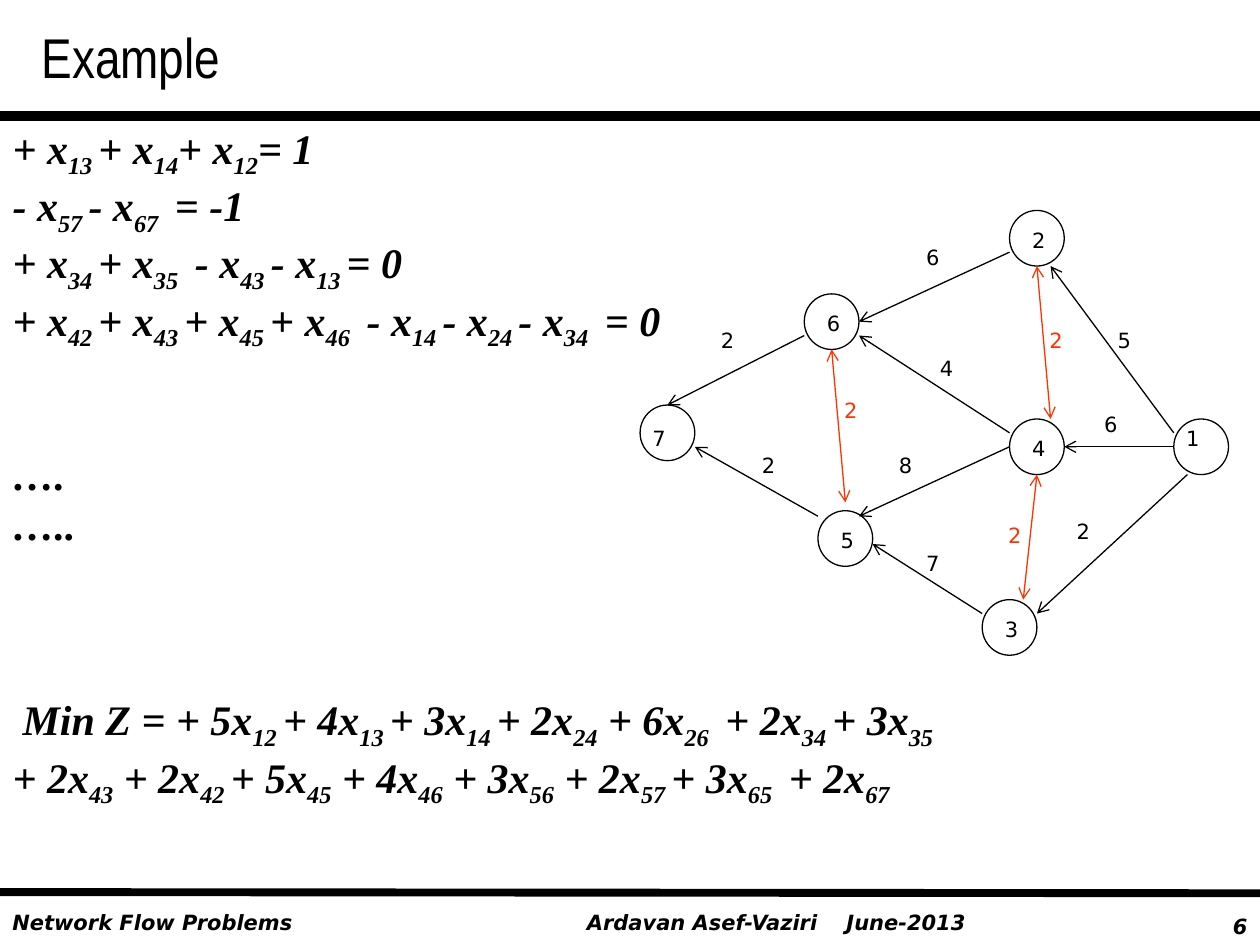
from dataclasses import dataclass

from lxml import etree
from pptx import Presentation
from pptx.dml.color import RGBColor
from pptx.enum.shapes import MSO_CONNECTOR, MSO_SHAPE
from pptx.enum.text import MSO_ANCHOR, MSO_AUTO_SIZE, PP_ALIGN
from pptx.oxml.ns import qn
from pptx.util import Inches, Pt

STRAIGHT = MSO_CONNECTOR.STRAIGHT
OVAL = MSO_SHAPE.OVAL
TOP = MSO_ANCHOR.TOP
NO_AUTOFIT = MSO_AUTO_SIZE.NONE
LEFT, RIGHT = PP_ALIGN.LEFT, PP_ALIGN.RIGHT
TITLE_AND_CONTENT = 1


@dataclass(frozen=True)
class Theme:
    black: RGBColor = RGBColor(0x00, 0x00, 0x00)
    red: RGBColor = RGBColor(0xFF, 0x33, 0x00)
    title_font: str = "Arial Narrow"
    formula_font: str = "Times New Roman"
    label_font: str = "DejaVu Sans"
    title_size: int = 32
    formula_size: int = 24
    label_size: int = 12
    thin: float = 0.75


THEME = Theme()
SLIDE_WIDTH, SLIDE_HEIGHT = Inches(10), Inches(7.5)

# Formulas: braces hold subscripts; the number is the count of empty lines above
FORMULAS = [
    ("+ x{13 }+ x{14}+ x{12}= 1", 0),
    ("- x{57 }- x{67 } = -1", 0),
    ("+ x{34 }+ x{35 } - x{43 }- x{13 }= 0", 0),
    ("+ x{42 }+ x{43 }+ x{45 }+ x{46 } - x{14 }- x{24 }- x{34 } = 0", 0),
    ("….", 2),
    ("…..", 0),
    ("Min Z = + 5x{12 }+ 4x{13 }+ 3x{14 }+ 2x{24} + 6x{26 } + 2x{34 }+ 3x{35}", 3),
    ("+ 2x{43} + 2x{42 }+ 5x{45} + 4x{46} + 3x{56} + 2x{57 }+ 3x{65 } + 2x{67}", 0),
]
EMPTY_LINE = 27.6
OBJECTIVE_INDENT = 0.08

# Network, in columns and rows of its own grid
COLUMNS, ROWS, NODE_CELLS = 43, 32, 4
# number: (column, row), offset of the number within the node
NODES = {
    "1": ((39, 15), (0, 0)),
    "2": ((27, 0), (0.75, 0.75)),
    "3": ((25, 28), (0.75, 0.75)),
    "4": ((27, 15), (0.75, 0.75)),
    "5": ((13, 21.6), (0.75, 0.75)),
    "6": ((12, 6), (0.75, 0.75)),
    "7": ((0, 14), (0, 1)),
}
# start, end, capacity, place of the capacity
ONE_WAY_ARCS = [
    ((40, 19), (29, 29), "2", (31, 21.75)),
    ((39, 17), (31, 17), "6", (33, 14)),
    ((39, 16), (30, 4), "5", (34, 8)),
    ((27, 3), (16, 8), "6", (20, 2)),
    ((27, 17), (16, 22), "8", (18, 17)),
    ((25, 29), (17, 24), "7", (20, 24)),
    ((27, 16), (16, 9), "4", (21, 10)),
    ((12, 9), (2, 14), "2", (5, 8)),
    ((13, 22), (4, 17), "2", (8, 17)),
]
TWO_WAY_ARCS = [
    ((14, 10), (15, 21), "2", (14, 13)),
    ((29, 19), (28, 28), "2", (26, 22)),
    ((29, 4), (30, 15), "2", (29, 8)),
]


def share(left, top, width, height):
    """Turn percentages of the slide into a box."""
    return (int(SLIDE_WIDTH * left / 100), int(SLIDE_HEIGHT * top / 100),
            int(SLIDE_WIDTH * width / 100), int(SLIDE_HEIGHT * height / 100))


def place(shape, box):
    shape.left, shape.top, shape.width, shape.height = box


def prepare_frame(shape):
    frame = shape.text_frame
    frame.word_wrap = True
    frame.auto_size = NO_AUTOFIT
    frame.vertical_anchor = TOP
    return frame


def style(paragraph, font_name, size, color=THEME.black, strong=False):
    font = paragraph.font
    font.name, font.size = font_name, Pt(size)
    font.bold = font.italic = strong
    font.color.rgb = color


def add_label(slide, box, text, color=THEME.black, strong=False, alignment=LEFT, tab=None):
    paragraph = prepare_frame(slide.shapes.add_textbox(*box)).paragraphs[0]
    paragraph.text = text
    paragraph.alignment = alignment
    if tab:
        stops = etree.SubElement(paragraph._p.get_or_add_pPr(), qn("a:tabLst"))
        etree.SubElement(stops, qn("a:tab"), pos=str(Inches(tab)), algn="l")
    style(paragraph, THEME.label_font, THEME.label_size, color, strong)


def add_line(slide, start, end, width, color=THEME.black, arrowheads=()):
    connector = slide.shapes.add_connector(STRAIGHT, *start, *end)
    connector.line.color.rgb = color
    connector.line.width = Pt(width)
    outline = connector.line._get_or_add_ln()
    for arrowhead in arrowheads:
        etree.SubElement(outline, qn(arrowhead), type="arrow")
    etree.SubElement(connector._element.spPr, qn("a:effectLst"))


def add_title(slide, box):
    title = slide.shapes.title
    place(title, box)
    paragraph = prepare_frame(title).paragraphs[0]
    paragraph.text = "Example"
    paragraph.alignment = LEFT
    style(paragraph, THEME.title_font, THEME.title_size)


def add_formulas(slide, box):
    body = slide.placeholders[1]
    place(body, box)
    frame = prepare_frame(body)
    for index, (formula, empty_lines) in enumerate(FORMULAS):
        paragraph = frame.add_paragraph() if index else frame.paragraphs[0]
        paragraph.space_before = Pt(empty_lines * EMPTY_LINE)
        indent = OBJECTIVE_INDENT if formula.startswith("Min") else 0
        properties = paragraph._p.get_or_add_pPr()
        properties.set("marL", "0")
        properties.set("indent", str(Inches(indent)))
        etree.SubElement(properties, qn("a:buNone"))
        style(paragraph, THEME.formula_font, THEME.formula_size, strong=True)
        for part, text in enumerate(formula.replace("}", "{").split("{")):
            if text:
                run = paragraph.add_run()
                run.text = text
                if part % 2:
                    run.font._element.set("baseline", "-25000")


def add_network(slide, box):
    left, top, width, height = box
    label_size = Inches(0.38), Inches(0.4)

    def point(column, row):
        return int(left + width * column / COLUMNS), int(top + height * row / ROWS)

    # Nodes
    node_size = width * NODE_CELLS // COLUMNS, height * NODE_CELLS // ROWS
    for number, ((column, row), (across, down)) in NODES.items():
        node = slide.shapes.add_shape(OVAL, *point(column, row), *node_size)
        node.shadow.inherit = False
        node.fill.background()
        node.line.color.rgb = THEME.black
        node.line.width = Pt(THEME.thin)
        add_label(slide, (*point(column + across, row + down), *label_size), number)

    # Arcs and their capacities
    for arcs, color, arrowheads in (
        (ONE_WAY_ARCS, THEME.black, ["a:tailEnd"]),
        (TWO_WAY_ARCS, THEME.red, ["a:headEnd", "a:tailEnd"]),
    ):
        for start, end, capacity, label_place in arcs:
            add_line(slide, point(*start), point(*end), THEME.thin, color, arrowheads)
            add_label(slide, (*point(*label_place), *label_size), capacity, color)


def add_rule(slide, box, width):
    left, top, length, rise = box
    add_line(slide, (left, top), (left + length, top + rise), width)


def add_footer(slide, box):
    left, top, width, height = box
    add_label(slide, (left, top, int(width * 0.47), height), "Network Flow Problems", strong=True)
    add_label(slide, (left + int(width * 0.456), top, int(width * 0.335), height),
              "Ardavan Asef-Vaziri\tJune-2013", strong=True, tab=2.06)
    add_label(slide, (left + int(width * 0.925), top + height // 10, int(width * 0.075), height),
              "6", strong=True, alignment=RIGHT)


def main():
    presentation = Presentation()
    presentation.slide_width, presentation.slide_height = SLIDE_WIDTH, SLIDE_HEIGHT
    slide = presentation.slides.add_slide(presentation.slide_layouts[TITLE_AND_CONTENT])
    add_rule(slide, share(0, 12.27, 100, 0), 6)
    add_rule(slide, share(0, 94.4, 100, 0.13), 4.5)
    add_footer(slide, share(0, 95.6, 100, 4))
    add_title(slide, share(2.3, 1.73, 17.4, 8.53))
    add_formulas(slide, share(0, 12.27, 79.6, 82))
    add_network(slide, share(50.8, 22.27, 46.7, 47.07))
    presentation.save("out.pptx")


if __name__ == "__main__":
    main()
